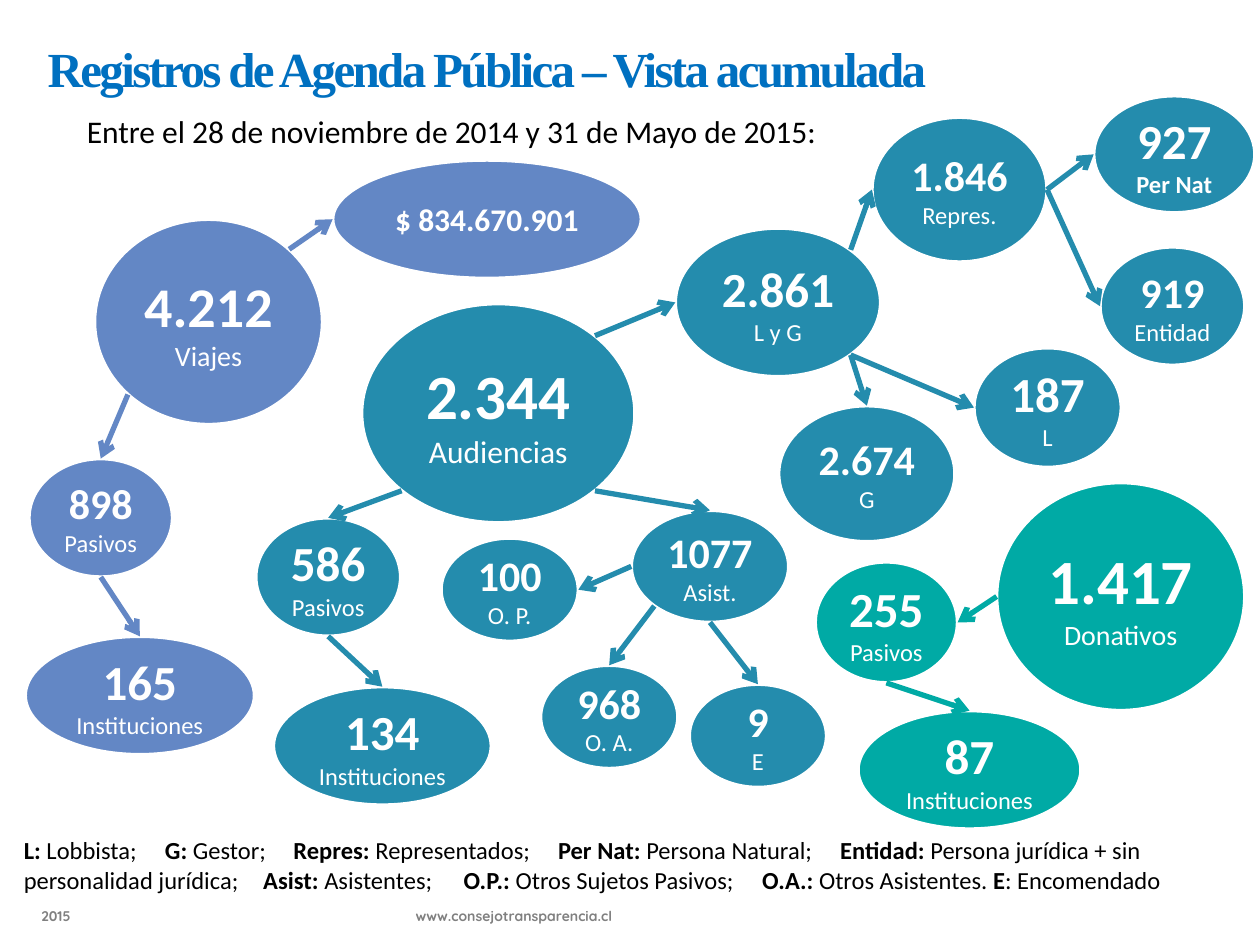
from math import cos, pi, sin
from typing import NamedTuple

from lxml.etree import SubElement
from pptx import Presentation
from pptx.dml.color import RGBColor
from pptx.enum.shapes import MSO_CONNECTOR, MSO_SHAPE
from pptx.enum.text import MSO_ANCHOR, MSO_AUTO_SIZE, PP_ALIGN
from pptx.oxml.ns import qn
from pptx.util import Inches, Pt

HUES = {
    "trip": "6387C5", "meet": "248CAD", "gift": "00AAA5", "white": "FFFFFF",
    "black": "000000", "title": "0070C0", "gray": "808080",
}
# Angles of the points on an oval where arrows meet it, clockwise from the right
SITES = {"right": 0, "low right": 45, "bottom": 90, "low left": 135,
         "left": 180, "top": 270, "high right": 315}


class Oval(NamedTuple):
    hue: str
    left: float
    top: float
    width: float
    height: float
    count: str
    size: int
    label: str = ""
    small: int = 14
    bold: bool = False

    def site(self, name: str) -> tuple[float, float]:
        turn = SITES[name] * pi / 180
        return (self.left + self.width / 2 * (1 + cos(turn)),
                self.top + self.height / 2 * (1 + sin(turn)))


class Link(NamedTuple):
    start: str
    leave: str
    end: str
    enter: str


OVALS = {
    "trips": Oval("trip", 0.75, 1.74, 1.81, 1.63, "4.212", 32, "Viajes", 16),
    "cost": Oval("trip", 2.64, 1.27, 2.45, 0.94, "$ 834.670.901", 18),
    "trip staff": Oval("trip", 0.23, 3.64, 1.14, 0.94, "898", 24, "Pasivos"),
    "trip orgs": Oval("trip", 0.2, 5.05, 1.82, 0.94, "165", 28, "Instituciones"),
    "meets": Oval("meet", 2.87, 2.41, 2.17, 1.74, "2.344", 36, "Audiencias", 18),
    "meet staff": Oval("meet", 2.03, 4.11, 1.15, 0.94, "586", 28, "Pasivos"),
    "meet orgs": Oval("meet", 2.17, 5.45, 1.73, 0.94, "134", 28, "Instituciones"),
    "both": Oval("meet", 5.36, 1.81, 1.63, 1.18, "2.861", 28, "L y G"),
    "repres": Oval("meet", 6.92, 0.93, 1.39, 1.15, "1.846", 24, "Repres."),
    "person": Oval("meet", 8.68, 0.76, 1.28, 0.93, "927", 28, "Per Nat", bold=True),
    "entity": Oval("meet", 8.73, 1.96, 1.15, 0.94, "919", 24, "Entidad"),
    "lobby": Oval("meet", 7.73, 2.76, 1.17, 0.95, "187", 28, "L"),
    "agent": Oval("meet", 6.18, 3.22, 1.4, 1.08, "2.674", 24, "G"),
    "guests": Oval("meet", 5.01, 4.05, 1.25, 0.89, "1077", 24, "Asist."),
    "others": Oval("meet", 3.5, 4.27, 1.09, 0.82, "100", 24, "O. P."),
    "extras": Oval("meet", 4.29, 5.28, 1.09, 0.82, "968", 24, "O. A."),
    "sent": Oval("meet", 5.47, 5.43, 1.09, 0.82, "9", 24, "E"),
    "gifts": Oval("gift", 7.91, 3.83, 1.97, 1.81, "1.417", 36, "Donativos", 16),
    "gift staff": Oval("gift", 6.47, 4.46, 1.13, 0.96, "255", 28, "Pasivos"),
    "gift orgs": Oval("gift", 6.81, 5.64, 1.77, 0.94, "87", 28, "Instituciones"),
}
LINKS = [
    Link("trips", "high right", "cost", "left"),
    Link("trips", "low left", "trip staff", "top"),
    Link("trip staff", "bottom", "trip orgs", "top"),
    Link("meets", "high right", "both", "left"),
    Link("meets", "low left", "meet staff", "top"),
    Link("meets", "low right", "guests", "top"),
    Link("meet staff", "bottom", "meet orgs", "top"),
    Link("both", "high right", "repres", "left"),
    Link("both", "low right", "agent", "top"),
    Link("both", "low right", "lobby", "left"),
    Link("repres", "right", "person", "left"),
    Link("repres", "right", "entity", "left"),
    Link("guests", "left", "others", "right"),
    Link("guests", "low left", "extras", "top"),
    Link("guests", "bottom", "sent", "top"),
    Link("gifts", "left", "gift staff", "right"),
    Link("gift staff", "bottom", "gift orgs", "top"),
]
TERMS = [
    ("L: ", "Lobbista;\t"), ("G: ", "Gestor;\t"), ("Repres: ", "Representados;\t"),
    ("Per Nat: ", "Persona Natural;\t"),
    ("Entidad: ", "Persona jurídica + sin personalidad jurídica;\t"),
    ("Asist: ", "Asistentes;\t"), ("O.P.: ", "Otros Sujetos Pasivos;\t"),
    ("O.A.: ", "Otros Asistentes. "), ("E", ": Encomendado"),
]


def color(name: str) -> RGBColor:
    return RGBColor.from_string(HUES[name])


def write(para, text: str, *, size: int, hue: str, bold: bool = False,
          font: str = "Calibri", space: float = 0) -> None:
    """Add one run; space is the letter spacing in points."""
    run = para.add_run()
    run.text = text
    run.font.name = font
    run.font.size = Pt(size)
    run.font.bold = bold
    run.font.color.rgb = color(hue)
    if space:
        run._r.get_or_add_rPr().set("spc", str(round(space * 100)))


def add_box(slide, left: float, top: float, width: float, height: float):
    """Add a wrapping text box and return its first paragraph."""
    box = slide.shapes.add_textbox(*map(Inches, (left, top, width, height)))
    box.text_frame.word_wrap = True
    box.text_frame.auto_size = MSO_AUTO_SIZE.SHAPE_TO_FIT_TEXT
    return box.text_frame.paragraphs[0]


def set_tabs(para, *stops: float) -> None:
    tabs = SubElement(para._p.get_or_add_pPr(), qn("a:tabLst"))
    for stop in stops:
        SubElement(tabs, qn("a:tab"), pos=str(Inches(stop)), algn="l")


def draw_oval(slide, oval: Oval) -> None:
    place = map(Inches, (oval.left, oval.top, oval.width, oval.height))
    shape = slide.shapes.add_shape(MSO_SHAPE.OVAL, *place)
    shape.shadow.inherit = False
    shape.fill.solid()
    shape.fill.fore_color.rgb = color(oval.hue)
    shape.line.color.rgb = color("white")
    shape.line.width = Pt(2)
    frame = shape.text_frame
    frame.word_wrap = True
    frame.vertical_anchor = MSO_ANCHOR.MIDDLE
    frame.margin_left = frame.margin_right = 0
    para = frame.paragraphs[0]
    para.alignment = PP_ALIGN.CENTER
    write(para, oval.count, size=oval.size, hue="white", bold=True)
    if oval.label:
        para = frame.add_paragraph()
        para.alignment = PP_ALIGN.CENTER
        write(para, oval.label, size=oval.small, hue="white", bold=oval.bold)


def draw_link(slide, link: Link) -> None:
    start, end = OVALS[link.start], OVALS[link.end]
    ends = map(Inches, start.site(link.leave) + end.site(link.enter))
    line = slide.shapes.add_connector(MSO_CONNECTOR.STRAIGHT, *ends)
    line.line.color.rgb = color(start.hue)
    line.line.width = Pt(3)
    SubElement(line.line._get_or_add_ln(), qn("a:tailEnd"), type="arrow")
    SubElement(line._element.spPr, qn("a:effectLst"))


def main() -> None:
    deck = Presentation()
    deck.slide_width, deck.slide_height = Inches(10), Inches(7.5)
    slide = deck.slides.add_slide(deck.slide_layouts[6])

    write(add_box(slide, 0.28, 0.26, 9.21, 0.57),
          "Registros de Agenda Pública – Vista acumulada", size=28,
          hue="title", bold=True, font="Times New Roman", space=-1.5)
    write(add_box(slide, 0.59, 0.84, 6.32, 0.4),
          "Entre el 28 de noviembre de 2014 y 31 de Mayo de 2015:",
          size=18, hue="black")

    for oval in OVALS.values():
        draw_oval(slide, oval)
    for link in LINKS:
        draw_link(slide, link)

    para = add_box(slide, 0.09, 6.58, 9.79, 0.57)
    set_tabs(para, 1.12, 1.9, 2.14, 3.49, 4.24, 5.86, 6.48)
    for term, sense in TERMS:
        write(para, term, size=14, hue="black", bold=True)
        write(para, sense, size=14, hue="black")

    para = add_box(slide, 0.23, 7.15, 9.77, 0.5)
    set_tabs(para, 2.97)
    write(para, "2015\twww.consejotransparencia.cl", size=8, hue="gray",
          bold=True, font="Quicksand")
    deck.save("out.pptx")


if __name__ == "__main__":
    main()
